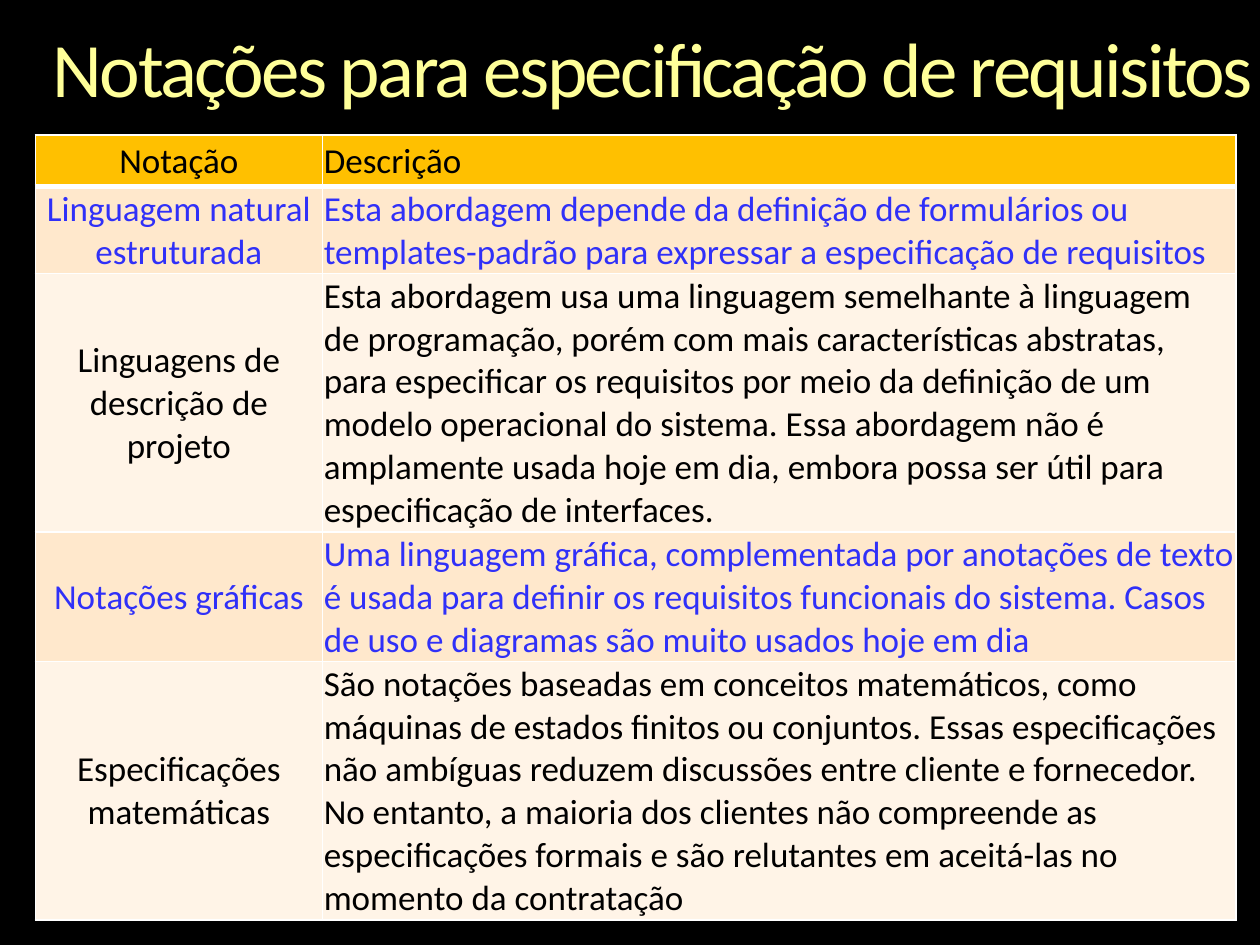
"""Build a slide with a table of notations for requirements specification."""
from dataclasses import dataclass

import pptx
import pptx.dml.color
import pptx.enum.text
import pptx.oxml
import pptx.oxml.ns
import pptx.util

Inches = pptx.util.Inches
Anchor = pptx.enum.text.MSO_ANCHOR
Align = pptx.enum.text.PP_ALIGN

COLORS = {
    "background": "000000", "title": "FFFF99", "header": "FFC000",
    "band_dark": "FFE8CC", "band_light": "FFF4E7",
    "text": "000000", "accent": "3030F8", "border": "FFFFFF",
}
WIDTH, HEIGHT = 10, 7.5
LINE_HEIGHT = 0.34
HEADER_HEIGHT = 0.41
COLUMN_WIDTHS = (2.28, 7.25)
MARGINS = {"margin_left": 0.01, "margin_top": 0.01, "margin_right": 0.01, "margin_bottom": 0}
TITLE_FRAME = {"left": 0.042 * WIDTH, "top": 0.033 * HEIGHT,
               "width": 0.958 * WIDTH, "height": 0.09 * HEIGHT}


@dataclass
class Notation:
    """One table row: its name, description, number of lines and colours."""
    name: str
    description: str
    lines: int
    ink: str
    fill: str


NOTATIONS = [
    Notation("Linguagem natural estruturada",
             "Esta abordagem depende da definição de formulários ou templates-padrão "
             "para expressar a especificação de requisitos",
             2, "accent", "band_dark"),
    Notation("Linguagens de descrição de projeto",
             "Esta abordagem usa uma linguagem semelhante à linguagem de programação, "
             "porém com mais características abstratas, para especificar os requisitos "
             "por meio da definição de um modelo operacional do sistema. Essa abordagem "
             "não é amplamente usada hoje em dia, embora possa ser útil para "
             "especificação de interfaces.",
             6, "text", "band_light"),
    Notation("Notações gráficas",
             "Uma linguagem gráfica, complementada por anotações de texto é usada para "
             "definir os requisitos funcionais do sistema. Casos de uso e diagramas são "
             "muito usados hoje em dia",
             3, "accent", "band_dark"),
    Notation("Especificações matemáticas",
             "São notações baseadas em conceitos matemáticos, como máquinas de estados "
             "finitos ou conjuntos. Essas especificações não ambíguas reduzem discussões "
             "entre cliente e fornecedor. No entanto, a maioria dos clientes não "
             "compreende as especificações formais e são relutantes em aceitá-las no "
             "momento da contratação",
             6, "text", "band_light"),
]


def color(name: str) -> pptx.dml.color.RGBColor:
    """Return the named colour."""
    return pptx.dml.color.RGBColor.from_string(COLORS[name])


def set_lengths(target, lengths: dict) -> None:
    """Set attributes given in inches."""
    for name, value in lengths.items():
        setattr(target, name, Inches(value))


def set_font(span, size: float, ink: str) -> None:
    """Format a run of text."""
    formats = {"name": "Calibri", "size": pptx.util.Pt(size), "bold": False}
    for name, value in formats.items():
        setattr(span.font, name, value)
    span.font.color.rgb = color(ink)


def add_borders(cell, bottom: float) -> None:
    """Draw white borders around a cell, with the given bottom weight in points."""
    properties = cell._tc.get_or_add_tcPr()
    weights = {"lnL": 1, "lnR": 1, "lnT": 1, "lnB": bottom}
    for position, (side, weight) in enumerate(weights.items()):
        properties.insert(position, pptx.oxml.parse_xml(
            f'<a:{side} {pptx.oxml.ns.nsdecls("a")} w="{pptx.util.Pt(weight)}"><a:solidFill>'
            f'<a:srgbClr val="{COLORS["border"]}"/></a:solidFill></a:{side}>'))


def fill_cell(cell, text: str, ink: str, fill: str, align, anchor, bottom: float) -> None:
    """Write and format one table cell."""
    set_lengths(cell, MARGINS)
    cell.vertical_anchor = anchor
    cell.fill.solid()
    cell.fill.fore_color.rgb = color(fill)
    add_borders(cell, bottom)
    para = cell.text_frame.paragraphs[0]
    para.alignment = align
    span = para.add_run()
    span.text = text
    set_font(span, 20, ink)


def add_title(page, text: str) -> None:
    """Place and format the title placeholder."""
    box = page.shapes.title
    set_lengths(box, TITLE_FRAME)
    frame = box.text_frame
    set_lengths(frame, dict.fromkeys(MARGINS, 0))
    frame.word_wrap = True
    frame.vertical_anchor = Anchor.TOP
    frame.auto_size = pptx.enum.text.MSO_AUTO_SIZE.SHAPE_TO_FIT_TEXT
    para = frame.paragraphs[0]
    para.alignment = Align.LEFT
    para.line_spacing = 0.9
    span = para.add_run()
    span.text = text
    set_font(span, 44, "title")
    span.font._element.set("spc", "-150")


def add_notation_table(page, notations: list[Notation]) -> None:
    """Add the table with a header and one row per notation."""
    heights = [HEADER_HEIGHT] + [item.lines * LINE_HEIGHT + 0.01 for item in notations]
    table = page.shapes.add_table(
        len(heights), len(COLUMN_WIDTHS), Inches(0.028 * WIDTH), Inches(0.143 * HEIGHT),
        Inches(sum(COLUMN_WIDTHS)), Inches(sum(heights))).table
    for column, width in zip(table.columns, COLUMN_WIDTHS):
        column.width = Inches(width)
    header = Notation("Notação", "Descrição", 1, "text", "header")
    for index, item in enumerate([header, *notations]):
        table.rows[index].height = Inches(heights[index])
        is_header = item is header
        bottom = 3 if is_header else 1
        anchor = Anchor.MIDDLE if is_header else Anchor.BOTTOM
        fill_cell(table.cell(index, 0), item.name, item.ink, item.fill,
                  Align.CENTER, Anchor.MIDDLE, bottom)
        fill_cell(table.cell(index, 1), item.description, item.ink, item.fill,
                  Align.LEFT, anchor, bottom)
        if index == 1:
            for cell in table.rows[index].cells:
                cell._tc.tcPr.find(pptx.oxml.ns.qn("a:lnT")).set("w", str(pptx.util.Pt(3)))


def main() -> None:
    """Build and save the deck."""
    deck = pptx.Presentation()
    set_lengths(deck, {"slide_width": WIDTH, "slide_height": HEIGHT})
    page = deck.slides.add_slide(deck.slide_layouts.get_by_name("Title Only"))
    page.background.fill.solid()
    page.background.fill.fore_color.rgb = color("background")
    add_title(page, "Notações para especificação de requisitos")
    add_notation_table(page, NOTATIONS)
    deck.save("out.pptx")


if __name__ == "__main__":
    main()
